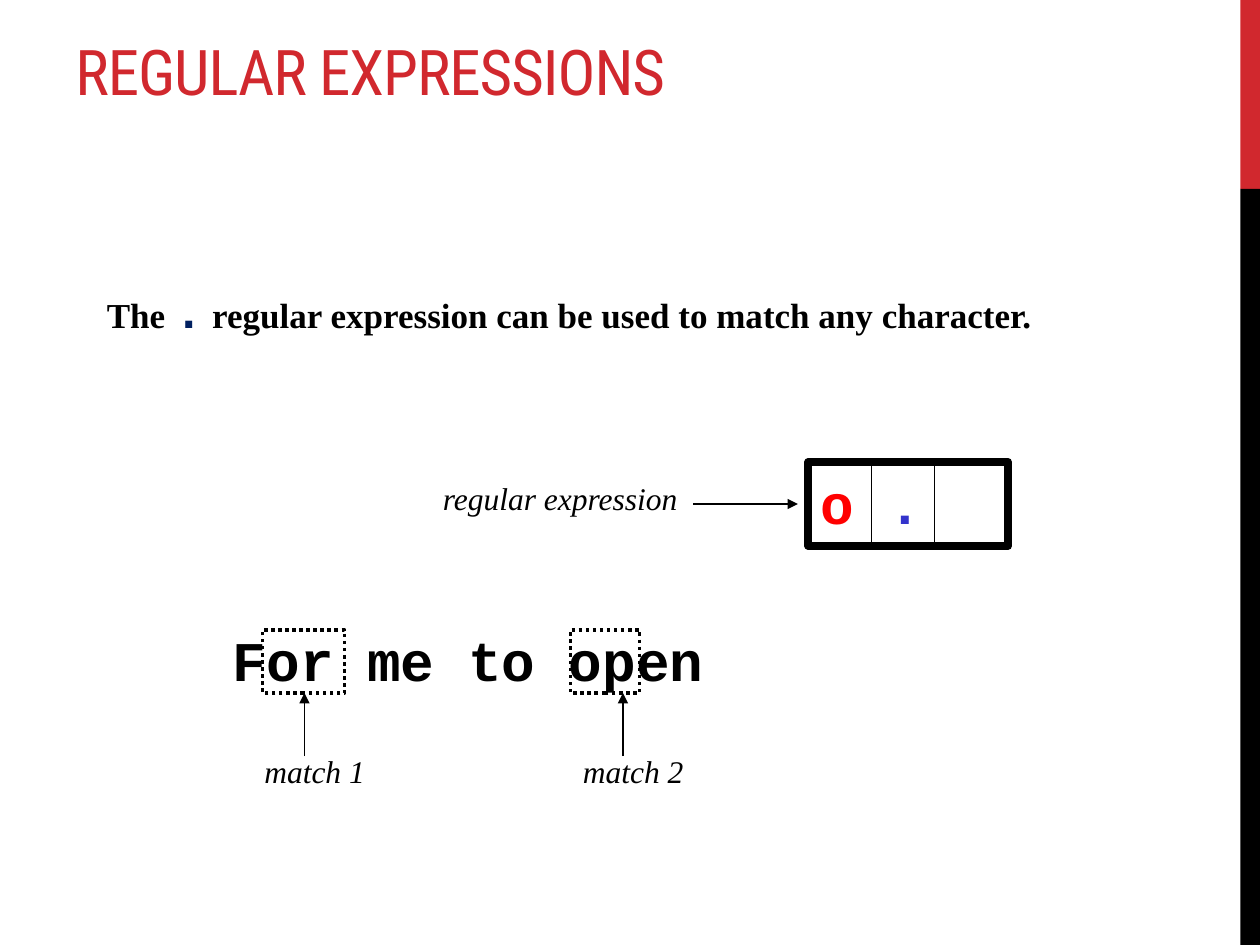
from lxml import etree
from pptx import Presentation
from pptx.dml.color import RGBColor
from pptx.enum.dml import MSO_LINE
from pptx.enum.shapes import MSO_CONNECTOR, MSO_SHAPE
from pptx.enum.text import MSO_ANCHOR
from pptx.oxml.ns import qn
from pptx.util import Pt

RECT = MSO_SHAPE.RECTANGLE
STRAIGHT = MSO_CONNECTOR.STRAIGHT
DOTTED = MSO_LINE.ROUND_DOT
BOTTOM = MSO_ANCHOR.BOTTOM

ACCENT = RGBColor(0xD1, 0x28, 0x2E)
BLACK = RGBColor(0, 0, 0)
NAVY = RGBColor(0x00, 0x20, 0x60)
RED = RGBColor(0xFF, 0, 0)
BLUE = RGBColor(0x33, 0x33, 0xCC)

SERIF = "Times New Roman"
MONO = "Courier New"

prs = Presentation()
prs.slide_width, prs.slide_height = Pt(720), Pt(540)
s = prs.slides.add_slide(prs.slide_layouts[6])


def add_text(x, y, w, h, runs, before=0, wrap=True, bold=False, italic=False):
    """Add a one-paragraph text box; each run is (text, font, size, colour)."""
    tf = s.shapes.add_textbox(Pt(x), Pt(y), Pt(w), Pt(h)).text_frame
    tf.word_wrap = wrap
    p = tf.paragraphs[0]
    p.space_before = Pt(before)
    for text, font, size, color in runs:
        r = p.add_run()
        r.text = text
        r.font.name, r.font.size = font, Pt(size)
        r.font.bold, r.font.italic = bold, italic
        r.font.color.rgb = color
    return tf


def add_line(x1, y1, x2, y2, arrow=False):
    line = s.shapes.add_connector(STRAIGHT, Pt(x1), Pt(y1), Pt(x2), Pt(y2))
    line.line.color.rgb = BLACK
    line.line.width = Pt(0.75)
    if arrow:
        ln = line.line._get_or_add_ln()
        etree.SubElement(ln, qn("a:tailEnd"), type="triangle")
    etree.SubElement(line._element.spPr, qn("a:effectLst"))


# Side bars
for y, h, color in ((0, 108, ACCENT), (108, 432, BLACK)):
    bar = s.shapes.add_shape(RECT, Pt(708.75), Pt(y), Pt(11.25), Pt(h))
    bar.shadow.inherit = False
    bar.fill.solid()
    bar.fill.fore_color.rgb = color
    bar.line.fill.background()

# Title
tf = add_text(36, 2, 672, 63.5, [("REGULAR EXPRESSIONS", "Roboto Condensed", 36, ACCENT)])
tf.vertical_anchor = BOTTOM
tf.paragraphs[0].runs[0].font._element.set("spc", "-60")

# Explanation
add_text(54, 156, 612, 84, [
    ("The ", SERIF, 20, BLACK),
    (".", MONO, 28, NAVY),
    (" regular expression can be used to match any character.", SERIF, 20, BLACK),
], before=4.3, bold=True)

# Sample sentence
add_text(126, 354, 486, 45, [("For me to open", MONO, 32, BLACK)], before=5.6, bold=True)

# Italic labels
for text, x, y, w in (("match 1", 144, 426, 72), ("match 2", 326, 426, 72),
                      ("regular expression", 246, 270, 150)):
    add_text(x, y, w, 29, [(text, SERIF, 18, BLACK)], before=1.7, wrap=False, italic=True)

# Arrows from labels
for x in (174, 356):
    add_line(x, 432, x, 396, arrow=True)
add_line(396, 288, 456, 288, arrow=True)

# Frames: the expression cells and the two dotted matches
for x, y, w, h, weight, dash in ((462, 264, 114, 48, 4.5, None),
                                 (150, 360, 47, 36, 2, DOTTED),
                                 (326, 360, 39.5, 36, 2, DOTTED)):
    frame = s.shapes.add_shape(RECT, Pt(x), Pt(y), Pt(w), Pt(h))
    frame.shadow.inherit = False
    frame.fill.background()
    frame.line.color.rgb = BLACK
    frame.line.width = Pt(weight)
    if dash:
        frame.line.dash_style = dash

# Expression and cell dividers
add_text(462, 264, 102, 45, [("o ", MONO, 32, RED), (".", MONO, 32, BLUE)],
         before=5.6, bold=True)
for x in (498, 534, 576):
    add_line(x, 264, x, 312)

prs.save("out.pptx")
